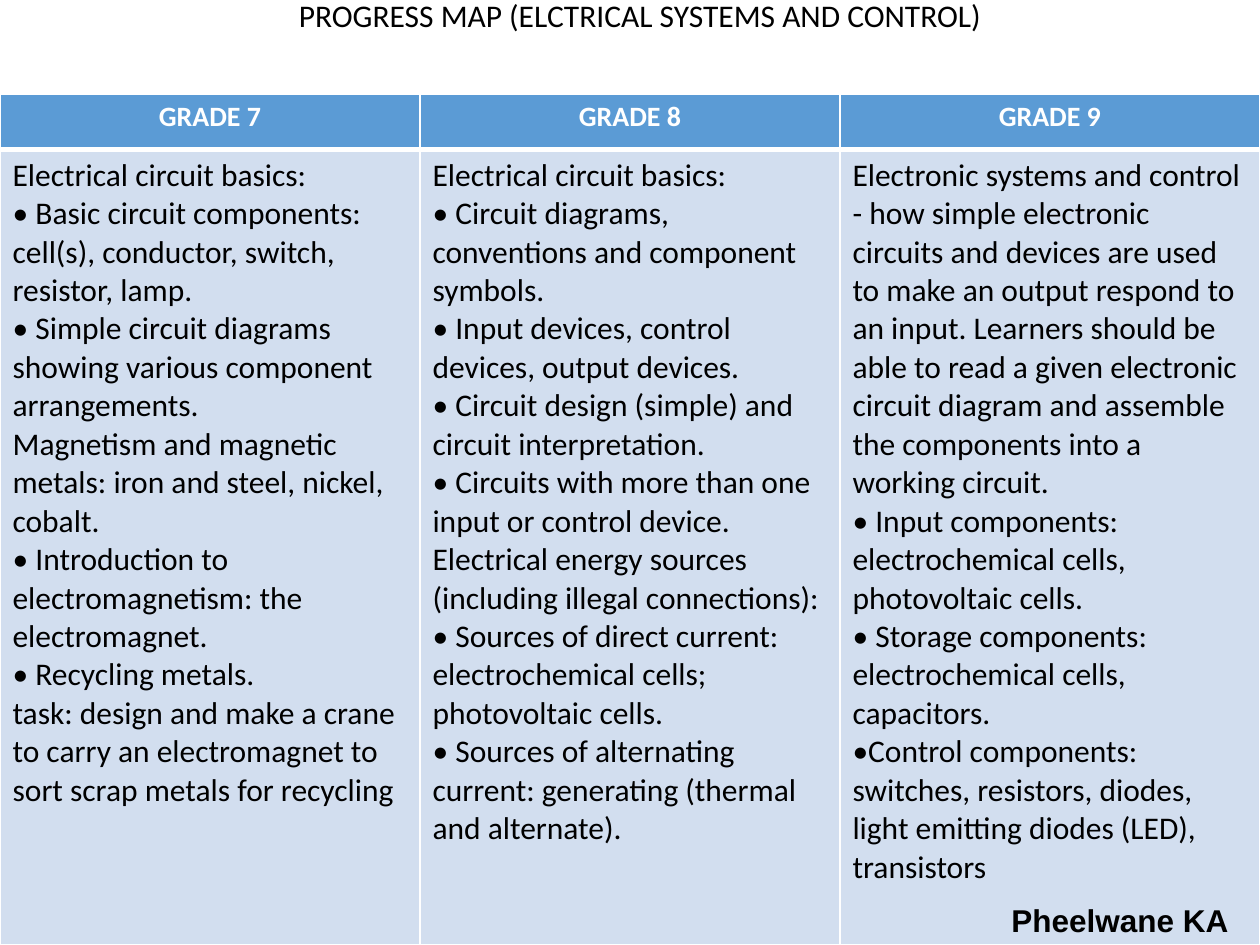
"""Build a progress map slide comparing electrical topics across three grades."""
from lxml import etree
from pptx import Presentation
from pptx import util as u
from pptx.dml.color import RGBColor
from pptx.enum import text
from pptx.oxml.ns import qn

TITLE = "PROGRESS MAP (ELCTRICAL SYSTEMS AND CONTROL)"
AUTHOR = "Pheelwane KA"
GRADES = {
    "GRADE 7": [
        "Electrical circuit basics:",
        "• Basic circuit components: cell(s), conductor, switch, resistor, lamp.",
        "• Simple circuit diagrams showing various component arrangements.",
        "Magnetism and magnetic metals: iron and steel, nickel, cobalt.",
        "• Introduction to electromagnetism: the electromagnet.",
        "• Recycling metals.",
        "task: design and make a crane to carry an electromagnet to sort scrap metals for recycling",
    ],
    "GRADE 8": [
        "Electrical circuit basics:",
        "• Circuit diagrams, conventions and component symbols.",
        "• Input devices, control devices, output devices.",
        "• Circuit design (simple) and circuit interpretation.",
        "• Circuits with more than one input or control device.",
        "Electrical energy sources (including illegal connections):",
        "• Sources of direct current: electrochemical cells; photovoltaic cells.",
        "• Sources of alternating current: generating (thermal and alternate).",
    ],
    "GRADE 9": [
        "Electronic systems and control - how simple electronic circuits and devices are used "
        "to make an output respond to an input. Learners should be able to read a given "
        "electronic circuit diagram and assemble the components into a working circuit.",
        "• Input components: electrochemical cells, photovoltaic cells.",
        "• Storage components: electrochemical cells, capacitors.",
        "•Control components: switches, resistors, diodes, light emitting diodes (LED), transistors",
    ],
}


class Theme:
    """Colours, type styles and paragraph formats."""
    header_fill, body_fill, white, black = "5B9BD5", "D2DEEF", "FFFFFF", "000000"
    body = {"name": "Calibri", "size": u.Pt(18), "bold": False}
    header = {"name": "Calibri", "size": u.Pt(16), "bold": True}
    author = {"name": "Arial", "size": u.Pt(18), "bold": True}
    left = {"alignment": text.PP_ALIGN.LEFT}
    header_format = {"alignment": text.PP_ALIGN.CENTER, "line_spacing": 1.15}
    title_format = {"alignment": text.PP_ALIGN.CENTER, "line_spacing": 0.9}
    header_margins = {"margin_left": u.Cm(0.18), "margin_right": u.Cm(0.18),
                      "margin_top": 0, "margin_bottom": 0}
    title_frame = {"margin_top": 0, "margin_bottom": 0,
                   "vertical_anchor": text.MSO_ANCHOR.MIDDLE}


def apply(target, values):
    """Set every named value on the target."""
    for name, value in values.items():
        setattr(target, name, value)


def write(frame, lines, font, paragraph_format, color):
    """Fill a text frame with one paragraph per line."""
    for index, line in enumerate(lines):
        paragraph = frame.add_paragraph() if index else frame.paragraphs[0]
        apply(paragraph, paragraph_format)
        run = paragraph.add_run()
        run.text = line
        apply(run.font, font)
        run.font.color.rgb = RGBColor.from_string(color)


def add_text(slide, box, line, font, paragraph_format, frame_format):
    """Add a wrapped text box at the given place in centimetres."""
    shape = slide.shapes.add_textbox(*map(u.Cm, box))
    shape.text_frame.word_wrap = True
    apply(shape.text_frame, frame_format)
    write(shape.text_frame, [line], font, paragraph_format, Theme.black)


def style_cell(cell, fill, bottom):
    """Fill a cell and give it white borders."""
    cell.fill.solid()
    cell.fill.fore_color.rgb = RGBColor.from_string(fill)
    properties = cell._tc.get_or_add_tcPr()
    for index, (side, width) in enumerate(zip("LRTB", (1, 1, 1, bottom))):
        line = etree.Element(qn(f"a:ln{side}"), w=str(u.Pt(width)))
        solid = etree.SubElement(line, qn("a:solidFill"))
        etree.SubElement(solid, qn("a:srgbClr"), val=Theme.white)
        properties.insert(index, line)


def add_grades(slide, width, top, row_heights):
    """Add the table with one equal column per grade."""
    shape = slide.shapes.add_table(2, len(GRADES), 0, top, width, sum(row_heights))
    table = shape.table
    table.horz_banding = False
    for row, height in zip(table.rows, row_heights):
        row.height = height
    for index, (grade, topics) in enumerate(GRADES.items()):
        table.columns[index].width = width // len(GRADES)
        header, body = table.cell(0, index), table.cell(1, index)
        style_cell(header, Theme.header_fill, 3)
        style_cell(body, Theme.body_fill, 1)
        apply(header, Theme.header_margins)
        write(header.text_frame, [grade], Theme.header, Theme.header_format, Theme.white)
        write(body.text_frame, topics, Theme.body, Theme.left, Theme.black)


def main():
    """Assemble and save the slide."""
    presentation = Presentation()
    apply(presentation, {"slide_width": u.Cm(25.4), "slide_height": u.Cm(19.05)})
    slide = presentation.slides.add_slide(presentation.slide_layouts[6])
    add_text(slide, (2.11, 0, 21.59, 0.7), TITLE, Theme.body,
             Theme.title_format, Theme.title_frame)
    add_grades(slide, presentation.slide_width, u.Cm(1.9), (u.Cm(1.12), u.Cm(16.03)))
    add_text(slide, (20.14, 18.03, 5.21, 1.02), AUTHOR, Theme.author, Theme.left, {})
    presentation.save("out.pptx")


if __name__ == "__main__":
    main()
